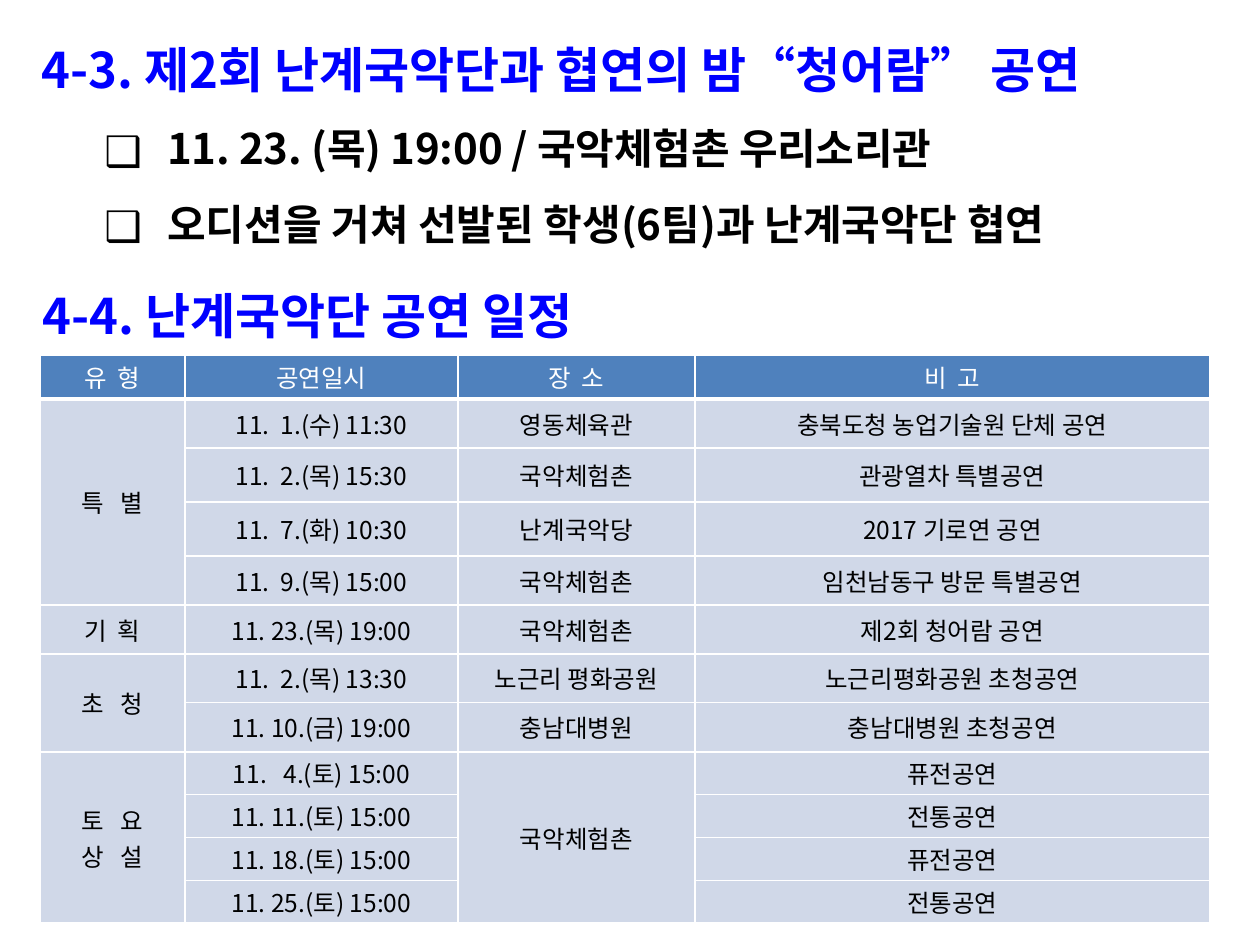
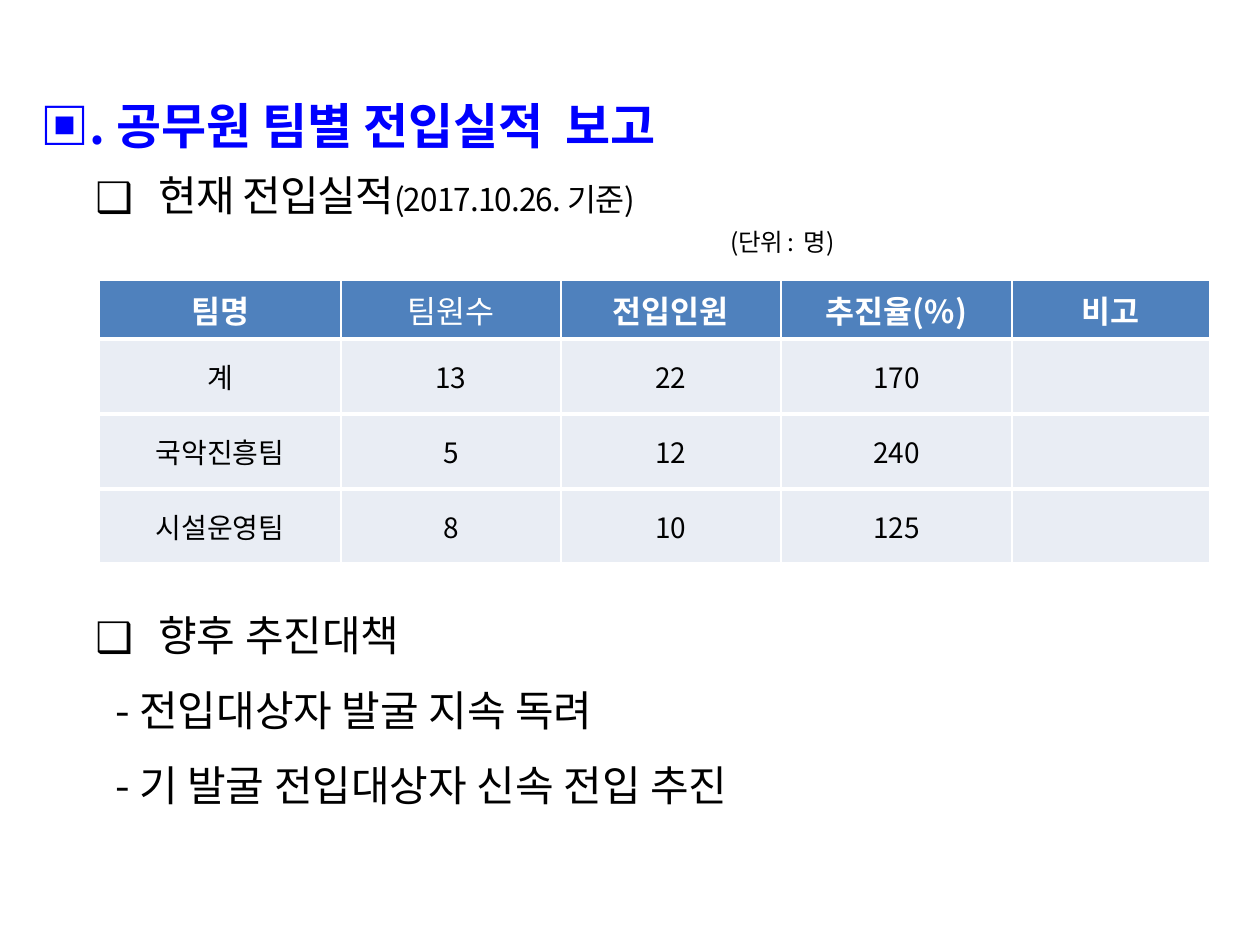
from lxml import etree
from pptx import Presentation
from pptx.dml.color import RGBColor
from pptx.enum.text import MSO_ANCHOR, PP_ALIGN
from pptx.oxml.ns import qn
from pptx.util import Emu, Pt

MIDDLE = MSO_ANCHOR.MIDDLE
CENTER = PP_ALIGN.CENTER

FONT = "Noto Sans CJK KR"
COLORS = {
    "title": "0000FF",
    "text": "000000",
    "head": "4F81BD",
    "white": "FFFFFF",
    "schedule": "D0D8E8",
    "results": "E9EDF4",
}
TITLE_SIZE, BODY_SIZE = 28, 24
TITLE_LINE, BODY_LINE = 49, 43  # line heights in points
HANG = 63  # bullet to text
BORDERS = {"left": "a:lnL", "right": "a:lnR", "top": "a:lnT", "bottom": "a:lnB"}


def px(length):
    return Emu(round(length * 914400 / 126))


def color(name):
    return RGBColor.from_string(COLORS[name])


# ---- Text ----
def add_span(para, text, size, tint="text", bold=False, spacing=0):
    span = para.add_run()
    span.text = text
    font = span.font
    font.name, font.size, font.bold = FONT, Pt(size), bold
    font.color.rgb = color(tint)
    props = span._r.get_or_add_rPr()
    if spacing:
        props.set("spc", str(round(spacing * 100)))
    etree.SubElement(props, qn("a:ea")).set("typeface", FONT)


def add_box(page, left, top, width, height):
    frame = page.shapes.add_textbox(px(left), px(top), px(width), px(height)).text_frame
    frame.word_wrap = True
    return frame


def add_para(frame, line, left=0, hang=0, bullet=None):
    para = frame.paragraphs[0]
    if para.runs:
        para = frame.add_paragraph()
    para.line_spacing = Pt(line)
    props = para._p.get_or_add_pPr()
    props.set("marL", str(px(left)))
    props.set("indent", str(px(-hang)))
    if bullet:
        tint = etree.SubElement(props, qn("a:buClr"))
        etree.SubElement(tint, qn("a:srgbClr")).set("val", COLORS["text"])
        etree.SubElement(props, qn("a:buFont")).set("typeface", FONT)
        etree.SubElement(props, qn("a:buChar")).set("char", bullet)
    return para


def add_title(frame, text, line=TITLE_LINE, left=73, hang=73):
    add_span(add_para(frame, line, left, hang), text, TITLE_SIZE, "title", True)


def add_item(frame, text, line=BODY_LINE, **style):
    para = add_para(frame, line, 2 * HANG, HANG, "❑")
    add_span(para, text, BODY_SIZE, **style)
    return para


# ---- Tables ----
def set_borders(cell, **weights):
    props = cell._tc.get_or_add_tcPr()
    for index, (side, tag) in enumerate(BORDERS.items()):
        line = etree.Element(qn(tag), w=str(Pt(weights.get(side, 1))))
        fill = etree.SubElement(line, qn("a:solidFill"))
        etree.SubElement(fill, qn("a:srgbClr")).set("val", COLORS["white"])
        props.insert(index, line)


def fill_cell(cell, text, size, tint, fill, bold, margin):
    cell.fill.solid()
    cell.fill.fore_color.rgb = color(fill)
    cell.vertical_anchor = MIDDLE
    cell.margin_top = cell.margin_bottom = px(margin)
    for index, line in enumerate(text.split("\n") if text else []):
        frame = cell.text_frame
        para = frame.add_paragraph() if index else frame.paragraphs[0]
        para.alignment = CENTER
        add_span(para, line, size, tint, bold)


def add_grid(page, left, top, widths, heights, rows, rules, fill,
             head_size, body_size, bold_heads=(), margin=6):
    """Draw a table; None continues the cell above, rules are row bottom weights."""
    table = page.shapes.add_table(len(rows), len(widths), px(left), px(top),
                                  px(sum(widths)), px(sum(heights))).table
    table.horz_banding = False
    for column, width in zip(table.columns, widths):
        column.width = px(width)
    for row, height in zip(table.rows, heights):
        row.height = px(height)

    for r, row in enumerate(rows):
        for c, text in enumerate(row):
            cell = table.cell(r, c)
            if r == 0:
                fill_cell(cell, text, head_size, "white", "head", text in bold_heads, margin)
            else:
                fill_cell(cell, text, body_size, "text", fill, False, margin)
            last = r
            while last + 1 < len(rows) and rows[last + 1][c] is None:
                last += 1
            set_borders(cell, top=rules[r - 1] if r else 1, bottom=rules[last])
            if last > r and text is not None:
                cell.merge(table.cell(last, c))


# ---- Slides ----
def build_concert_page(page):
    intro = add_box(page, 29, 6, 1221, 320)
    add_title(intro, "4-3. 제2회 난계국악단과 협연의 밤“청어람” 공연")
    add_item(intro, "11. 23. (목) 19:00 / 국악체험촌 우리소리관", bold=True, spacing=-0.1)
    add_item(intro, "오디션을 거쳐 선발된 학생(6팀)과 난계국악단 협연", bold=True)

    heading = add_box(page, 30, 252, 1211, 90)
    add_title(heading, "4-4. 난계국악단 공연 일정")

    schedule = [
        ("유  형", "공연일시", "장  소", "비  고"),
        ("특   별", "11.  1.(수) 11:30", "영동체육관", "충북도청 농업기술원 단체 공연"),
        (None, "11.  2.(목) 15:30", "국악체험촌", "관광열차 특별공연"),
        (None, "11.  7.(화) 10:30", "난계국악당", "2017 기로연 공연"),
        (None, "11.  9.(목) 15:00", "국악체험촌", "임천남동구 방문 특별공연"),
        ("기  획", "11. 23.(목) 19:00", "국악체험촌", "제2회 청어람 공연"),
        ("초   청", "11.  2.(목) 13:30", "노근리 평화공원", "노근리평화공원 초청공연"),
        (None, "11. 10.(금) 19:00", "충남대병원", "충남대병원 초청공연"),
        ("토   요\n상   설", "11.   4.(토) 15:00", "국악체험촌", "퓨전공연"),
        (None, "11. 11.(토) 15:00", None, "전통공연"),
        (None, "11. 18.(토) 15:00", None, "퓨전공연"),
        (None, "11. 25.(토) 15:00", None, "전통공연"),
    ]
    heights = [44, 49, 54, 54] + [49] * 4 + [43] * 4
    rules = [3, 1, 1, 1, 1.5, 1.5, 1, 1.5, 1, 1, 1, 2.25]
    add_grid(page, 40, 355, [145, 273, 237, 515], heights, schedule, rules,
             "schedule", 14, 14, margin=3)


def build_results_page(page):
    intro = add_box(page, 20, 68, 1235, 200)
    add_title(intro, "▣. 공무원 팀별 전입실적  보고", 46, 71, HANG)
    status = add_item(intro, "현재 전입실적", 37, spacing=-0.5)
    add_span(status, "(2017.10.26. 기준)", 18, spacing=-0.5)
    add_span(add_para(intro, 21, 698), "(단위 :  명)", 14, spacing=-0.5)

    results = [
        ("팀명", "팀원수", "전입인원", "추진율(%)", "비고"),
        ("계", "13", "22", "170", ""),
        ("국악진흥팀", "5", "12", "240", ""),
        ("시설운영팀", "8", "10", "125", ""),
    ]
    add_grid(page, 99, 280, [242, 220, 220, 231, 198], [59] + [75] * 3, results,
             [3] * 4, "results", 18, 16, ("팀명", "전입인원", "추진율(%)", "비고"))

    plan = add_box(page, 20, 578, 1235, 365)
    add_item(plan, "향후 추진대책")
    for step in ("전입대상자 발굴 지속 독려", "기 발굴 전입대상자 신속 전입 추진"):
        add_span(add_para(plan, BODY_LINE, 83), f"- {step}", BODY_SIZE)


def main():
    deck = Presentation()
    deck.slide_width, deck.slide_height = px(1260), px(945)
    blank = deck.slide_layouts[6]
    for build in (build_concert_page, build_results_page):
        build(deck.slides.add_slide(blank))
    deck.save("out.pptx")


if __name__ == "__main__":
    main()
